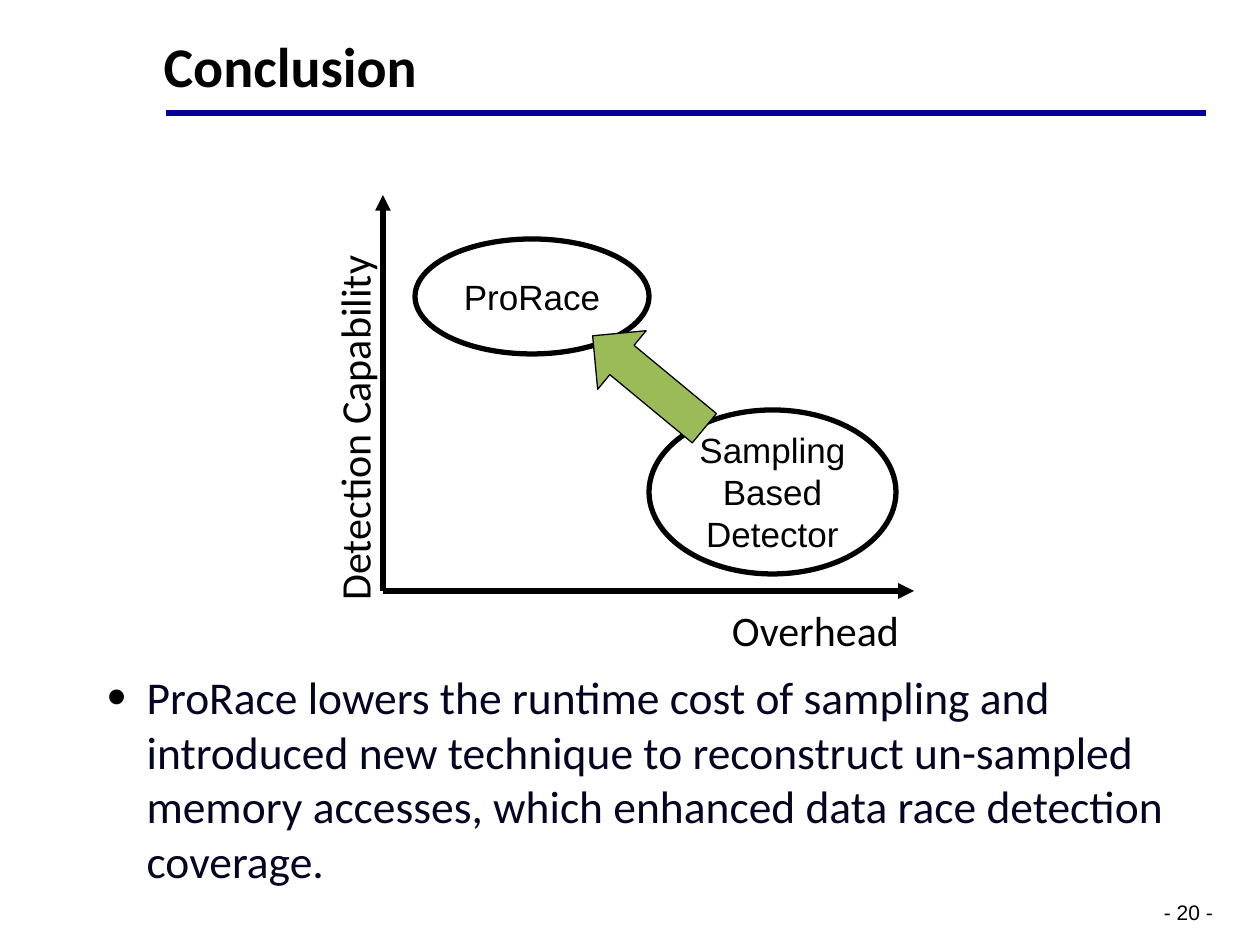
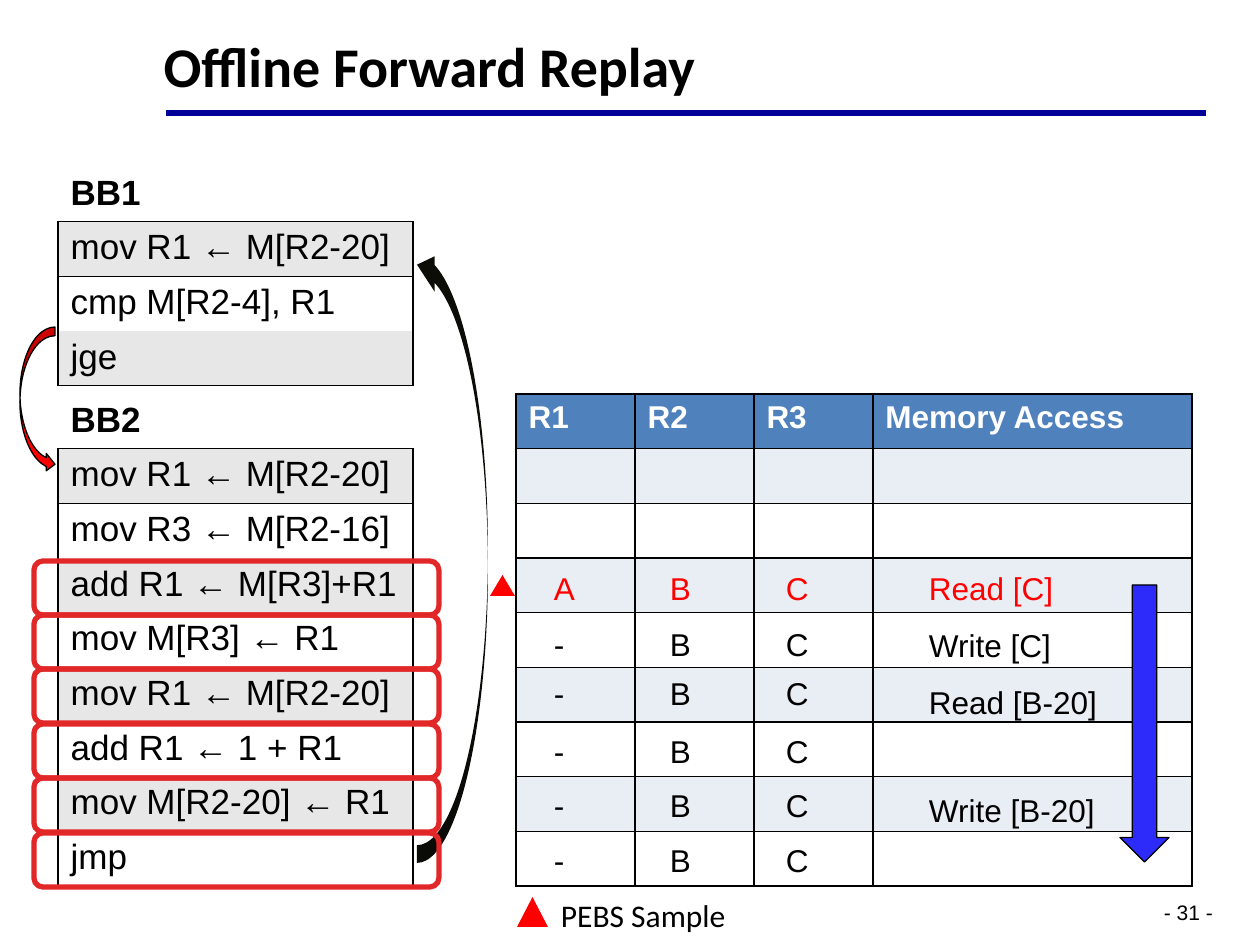
import lxml.etree
import pptx
import pptx.dml.color
import pptx.enum.shapes
import pptx.enum.text
import pptx.oxml.ns
import pptx.util

RGBColor = pptx.dml.color.RGBColor
SHAPE = pptx.enum.shapes.MSO_SHAPE
ALIGN = pptx.enum.text.PP_ALIGN
ANCHOR = pptx.enum.text.MSO_ANCHOR
qn = pptx.oxml.ns.qn

BLACK = RGBColor(0x00, 0x00, 0x00)
WHITE = RGBColor(0xFF, 0xFF, 0xFF)
RED = RGBColor(0xFF, 0x00, 0x00)
RULE_BLUE = RGBColor(0x00, 0x00, 0x99)
BODY_INK = RGBColor(0x05, 0x05, 0x23)
GREEN = RGBColor(0x9B, 0xBB, 0x59)
LOOP_DARK = RGBColor(0x0D, 0x0D, 0x08)
REPLAY_BLUE = RGBColor(0x2C, 0x2B, 0xFA)
BOX_RED = RGBColor(0xE1, 0x27, 0x28)
CODE_GRAY = RGBColor(0xE7, 0xE7, 0xE7)
HEADER_BLUE = RGBColor(0x4F, 0x81, 0xBD)
BAND_BLUE = RGBColor(0xE9, 0xED, 0xF4)

PX_PER_INCH = 126
PLAIN_TABLE_STYLE = "{2D5ABB26-0587-4C30-8999-92F81FD0307C}"


def emu(px):
    return round(px * 914400 / PX_PER_INCH)


class Deck:
    """Shared style plus the slide being built."""

    heading_font = "Calibri"
    label_font = "Arial"

    def __init__(self):
        self.presentation = pptx.Presentation()
        self.presentation.slide_width = emu(1260)
        self.presentation.slide_height = emu(945)
        self.slide = None

    def new_slide(self, layout_index, title, number):
        layout = self.presentation.slide_layouts[layout_index]
        self.slide = self.presentation.slides.add_slide(layout)
        frame = self.place(self.slide.shapes.title, (151, 18, 1109, 88))
        frame.vertical_anchor = ANCHOR.BOTTOM
        frame.text = title
        paragraph = frame.paragraphs[0]
        paragraph.alignment = ALIGN.LEFT
        paragraph.line_spacing = 0.9
        self.font(paragraph, 32, self.heading_font, bold=True)
        self.line((166, 113), (1206, 113), RULE_BLUE)
        self.text((1158, 897, 66, 30), f"- {number} -", 12, margins=(6, 3))

    def place(self, placeholder, box):
        placeholder.left, placeholder.top, placeholder.width, placeholder.height = map(emu, box)
        frame = placeholder.text_frame
        frame.word_wrap = True
        frame.auto_size = pptx.enum.text.MSO_AUTO_SIZE.NONE
        return frame

    def font(self, paragraph, size, name=label_font, color=BLACK, bold=False):
        font = paragraph.font
        font.size = pptx.util.Pt(size)
        font.name = name
        font.bold = bold
        font.color.rgb = color

    def body(self, box, text):
        frame = self.place(self.slide.placeholders[1], box)
        frame.text = text
        paragraph = frame.paragraphs[0]
        paragraph.space_before = pptx.util.Pt(0)
        properties = paragraph._p.get_or_add_pPr()
        properties.set("marL", str(emu(102)))
        properties.set("indent", str(-emu(39)))
        color = lxml.etree.SubElement(properties, qn("a:buClr"))
        lxml.etree.SubElement(color, qn("a:srgbClr"), val=str(BLACK))
        lxml.etree.SubElement(properties, qn("a:buSzPct"), val="120000")
        lxml.etree.SubElement(properties, qn("a:buFont"), typeface="Arial")
        lxml.etree.SubElement(properties, qn("a:buChar"), char="•")
        self.font(paragraph, 26, self.heading_font, BODY_INK)

    def text(self, box, text, size, name=label_font, color=BLACK, margins=(13, 6)):
        shape = self.slide.shapes.add_textbox(*map(emu, box))
        frame = shape.text_frame
        frame.word_wrap = False
        frame.margin_left = frame.margin_right = emu(margins[0])
        frame.margin_top = frame.margin_bottom = emu(margins[1])
        frame.text = text
        self.font(frame.paragraphs[0], size, name, color)
        return shape

    def line(self, start, end, color=BLACK, arrow=False):
        connector = self.slide.shapes.add_connector(
            pptx.enum.shapes.MSO_CONNECTOR.STRAIGHT, *map(emu, start + end))
        connector.line.color.rgb = color
        connector.line.width = pptx.util.Pt(3)
        if arrow:
            lxml.etree.SubElement(connector.line._get_or_add_ln(), qn("a:tailEnd"), type="triangle")
        lxml.etree.SubElement(connector._element.spPr, qn("a:effectLst"))

    def shape(self, kind, box, fill=None, outline=None, width=0.75, text=""):
        shape = self.slide.shapes.add_shape(kind, *map(emu, box))
        shape.shadow.inherit = False
        if fill is None:
            shape.fill.background()
        else:
            shape.fill.solid()
            shape.fill.fore_color.rgb = fill
        if outline is None:
            shape.line.fill.background()
        else:
            shape.line.color.rgb = outline
            shape.line.width = pptx.util.Pt(width)
        if text:
            frame = shape.text_frame
            frame.text = text
            frame.vertical_anchor = ANCHOR.MIDDLE
            for paragraph in frame.paragraphs:
                paragraph.alignment = ALIGN.CENTER
                self.font(paragraph, 20)
        return shape

    def table(self, left, top, widths, height, row_count):
        frame = self.slide.shapes.add_table(
            row_count, len(widths), *map(emu, (left, top, sum(widths), height)))
        table = frame.table
        table._tbl.tblPr.find(qn("a:tableStyleId")).text = PLAIN_TABLE_STYLE
        table.first_row = table.horz_banding = False
        for column, width in zip(table.columns, widths):
            column.width = emu(width)
        for row in table.rows:
            row.height = emu(height) // row_count
        return table

    def cell(self, cell, text, size, fill, borders="", color=BLACK, bold=False):
        cell.fill.solid()
        cell.fill.fore_color.rgb = fill
        cell.text = text
        self.font(cell.text_frame.paragraphs[0], size, color=color, bold=bold)
        properties = cell._tc.get_or_add_tcPr()
        sides = [side for side in "LRTB" if side in borders]
        for position, side in enumerate(sides):
            border = lxml.etree.Element(qn(f"a:ln{side}"), w="12700")
            solid = lxml.etree.SubElement(border, qn("a:solidFill"))
            lxml.etree.SubElement(solid, qn("a:srgbClr"), val=str(BLACK))
            properties.insert(position, border)

    def code_block(self, top, height, label, instructions):
        table = self.table(58, top, [355], height, len(instructions) + 1)
        self.cell(table.cell(0, 0), label, 20, WHITE, bold=True)
        for row, instruction in enumerate(instructions, 1):
            borders = "LR"
            if row == 1:
                borders += "T"
            if row == len(instructions):
                borders += "B"
            fill = CODE_GRAY if row % 2 else WHITE
            self.cell(table.cell(row, 0), instruction, 20, fill, borders)


def build_conclusion(deck):
    deck.new_slide(1, "Conclusion", 20)
    deck.body((32, 663, 1179, 241),
              "ProRace lowers the runtime cost of sampling and introduced new technique "
              "to reconstruct un-sampled memory accesses, which enhanced data race "
              "detection coverage.")

    # Axes and their labels
    origin = (383, 591)
    deck.line(origin, (383, 195), arrow=True)
    deck.line(origin, (914, 591), arrow=True)
    deck.text((719, 599, 194, 64), "Overhead", 24, deck.heading_font)
    capability = deck.text((168, 395, 373, 64), "Detection Capability", 24, deck.heading_font)
    capability.rotation = 270

    # Detectors and the improvement between them
    deck.shape(SHAPE.OVAL, (649, 410, 247, 164), None, BLACK, 3, "Sampling\nBased\nDetector")
    deck.shape(SHAPE.OVAL, (415, 239, 234, 115), None, BLACK, 3, "ProRace")
    improvement = deck.shape(SHAPE.RIGHT_ARROW, (576, 344, 145, 76), GREEN, BLACK)
    improvement.rotation = 219.6


def build_replay(deck):
    deck.new_slide(5, "Offline Forward Replay", 31)

    # Jumps between the basic blocks
    deck.shape(SHAPE.CURVED_RIGHT_ARROW, (20, 327, 35, 146), RED, BLACK)
    loop = deck.shape(SHAPE.CURVED_LEFT_ARROW, (417, 247, 71, 616), LOOP_DARK)
    loop._element.spPr.xfrm.set("flipV", "1")

    # Basic blocks
    deck.code_block(167, 218, "BB1", ["mov R1 ← M[R2-20]", "cmp M[R2-4], R1", "jge"])
    deck.code_block(394, 492, "BB2", [
        "mov R1 ← M[R2-20]", "mov R3 ← M[R2-16]", "add R1 ← M[R3]+R1", "mov M[R3] ← R1",
        "mov R1 ← M[R2-20]", "add R1 ← 1 + R1", "mov M[R2-20] ← R1", "jmp"])

    # Register and memory grid
    headers = ["R1", "R2", "R3", "Memory Access"]
    grid = deck.table(516, 394, [119, 119, 119, 319], 492, 9)
    for column, header in enumerate(headers):
        deck.cell(grid.cell(0, column), header, 18, HEADER_BLUE, "LRTB", WHITE, True)
        for row in range(1, 9):
            fill = BAND_BLUE if row % 2 else WHITE
            deck.cell(grid.cell(row, column), "", 18, fill, "LRTB")

    # Replayed values: register top, R1, memory top, memory access
    replay_steps = [
        (563, "A", 563, "Read [C]"),
        (619, "-", 620, "Write [C]"),
        (668, "-", 677, "Read [B-20]"),
        (726, "-", None, ""),
        (780, "-", 785, "Write [B-20]"),
        (835, "-", None, ""),
    ]
    for step, (top, first_register, access_top, access) in enumerate(replay_steps):
        color = BLACK if step else RED
        for column, value in enumerate([first_register, "B", "C"]):
            deck.text((541 + 116 * column, top, 78, 48), value, 18, color=color)
        if access:
            deck.text((916, access_top, 196, 48), access, 18, color=color)
    deck.shape(SHAPE.DOWN_ARROW, (1120, 585, 49, 277), REPLAY_BLUE, BLACK)

    # Replayed instructions
    for step in range(len(replay_steps)):
        deck.shape(SHAPE.ROUNDED_RECTANGLE, (34, 561 + 272 * step // 5, 405, 54),
                   None, BOX_RED, 3)

    # Sample marker and legend
    deck.shape(SHAPE.FLOWCHART_EXTRACT, (490, 575, 25, 21), RED)
    deck.shape(SHAPE.FLOWCHART_EXTRACT, (517, 897, 31, 30), RED)
    deck.text((548, 890, 192, 50), "PEBS Sample", 18, deck.heading_font)


def main():
    deck = Deck()
    build_conclusion(deck)
    build_replay(deck)
    deck.presentation.save("out.pptx")


if __name__ == "__main__":
    main()
